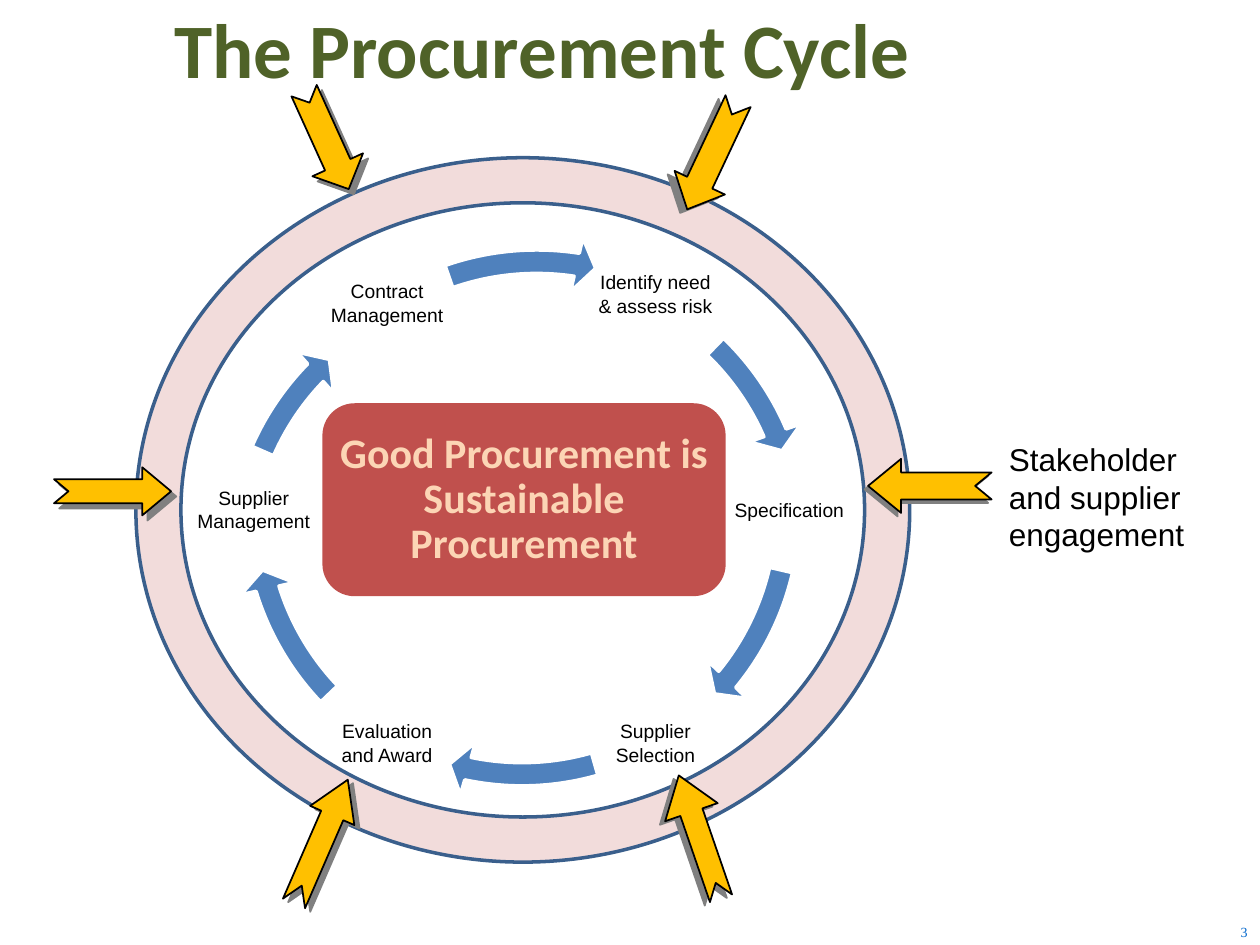
from lxml.etree import SubElement
from pptx import Presentation
from pptx.dml.color import RGBColor
from pptx.enum.shapes import MSO_SHAPE as SHAPE
from pptx.enum.text import MSO_ANCHOR as ANCHOR, MSO_AUTO_SIZE as AUTOSIZE, PP_ALIGN as ALIGN
from pptx.oxml.ns import qn
from pptx.util import Cm, Pt

GREEN, BLUE, RED, PEACH = "4F6228", "4F81BD", "C0504D", "FCD5B5"
GOLD, PINK, NAVY, GREY = "FFC000", "F2DCDB", "3A5F8C", "808080"
BLACK, WHITE, NUMBER_BLUE = "000000", "FFFFFF", "0066CC"

LABEL_SIZE = 2.41
STAGES = [  # text, left, top
    ("Identify need & assess risk", 12.01, 4.72),
    ("Specification", 14.71, 9.07),
    ("Supplier Selection", 12.01, 13.77),
    ("Evaluation and Award", 6.6, 13.77),
    ("Supplier Management", 3.91, 9.07),
    ("Contract Management", 6.6, 4.9),
]
CYCLE_ARROWS = [  # left, top, size, start and end in degrees
    (4.78, 4.93, 11.84, 313.95, 336.67),
    (4.6, 4.37, 11.84, 12.95, 39.44),
    (4.67, 4.45, 11.71, 73.98, 101.85),
    (4.6, 4.37, 11.84, 136.39, 162.88),
    (4.29, 5.33, 11.84, 203.69, 224.13),
    (4.9, 4.72, 11.84, 250.74, 278.65),
]
ENGAGEMENT_ARROWS = [  # place, rotation, shaft and head, shadow distance and direction
    ((1.09, 9.42, 2.36, 0.97), 0, (0.5, 0.6), 4.2, 45),
    ((5.49, 2.26, 2.18, 1.12), 65.6, (0.5, 0.48), 4.2, 45),
    ((13.16, 2.57, 2.41, 1.12), 115.2, (0.5, 0.53), 4.5, 153),
    ((17.5, 9.25, 2.49, 1.09), 180, (0.5, 0.61), 2.8, 135),
    ((12.8, 16.31, 2.62, 1.12), 251, (0.42, 0.7), 3.6, 146),
    ((5.11, 16.48, 2.72, 0.97), 293.5, (0.5, 0.81), 3.6, 34),
]


def color(value):
    return RGBColor.from_string(value)


class SlideBuilder:
    def __init__(self, page, font="Arial"):
        self.page = page
        self.font = font

    def fill_text(self, shape, lines, size, ink=BLACK, font=None, bold=False,
                  align=ALIGN.LEFT, anchor=ANCHOR.MIDDLE, inset=None, spacing=None):
        frame = shape.text_frame
        frame.word_wrap = True
        frame.auto_size = AUTOSIZE.NONE
        frame.vertical_anchor = anchor
        if inset is not None:
            frame.margin_left = frame.margin_right = Cm(inset)
            frame.margin_top = frame.margin_bottom = Cm(inset)
        for index, line in enumerate(lines):
            para = frame.add_paragraph() if index else frame.paragraphs[0]
            para.alignment = align
            if spacing:
                para.line_spacing = spacing
            span = para.add_run()
            span.text = line
            span.font.name = font or self.font
            span.font.size = Pt(size)
            span.font.bold = bold
            span.font.color.rgb = color(ink)

    def title(self, text, place, **style):
        title = self.page.shapes.title
        title.left, title.top, title.width, title.height = map(Cm, place)
        self.fill_text(title, [text], align=ALIGN.CENTER, **style)

    def text(self, lines, place, **style):
        box = self.page.shapes.add_textbox(*map(Cm, place))
        self.fill_text(box, lines, **style)

    def shape(self, kind, place, fill, line=None, weight=1, adjust=()):
        shape = self.page.shapes.add_shape(kind, *map(Cm, place))
        shape.shadow.inherit = False
        shape.fill.solid()
        shape.fill.fore_color.rgb = color(fill)
        if line:
            shape.line.color.rgb = color(line)
            shape.line.width = Pt(weight)
        else:
            shape.line.fill.background()
        for index, value in enumerate(adjust):
            shape.adjustments[index] = value
        return shape

    def cycle_arrow(self, left, top, size, start, end):
        # Angle adjustments count 60000 units per degree, scaled down by 100000.
        adjust = (0.04, 2.5, end * 0.6, start * 0.6, 0.047)
        self.shape(SHAPE.CIRCULAR_ARROW, (left, top, size, size), BLUE, WHITE, 2, adjust)

    def engagement_arrow(self, place, rotation, adjust, distance, direction):
        arrow = self.shape(SHAPE.NOTCHED_RIGHT_ARROW, place, GOLD, BLACK, 1, adjust)
        arrow.rotation = rotation
        effects = arrow._element.spPr.find(qn("a:effectLst"))
        shadow = SubElement(effects, qn("a:outerShdw"), dist=str(Pt(distance)),
                            dir=str(direction * 60000), algn="ctr", rotWithShape="0")
        SubElement(shadow, qn("a:srgbClr"), val=GREY)


def main():
    deck = Presentation()
    deck.slide_width, deck.slide_height = Cm(25.4), Cm(19.05)
    builder = SlideBuilder(deck.slides.add_slide(deck.slide_layouts[5]))

    builder.title("The Procurement Cycle", (-0.5, 0, 22.86, 1.93),
                  size=44, ink=GREEN, font="Calibri", bold=True)
    builder.text(["3"], (20.5, 18.52, 4.9, 0.53), size=8, ink=NUMBER_BLUE,
                 font="Times New Roman", align=ALIGN.RIGHT)

    builder.shape(SHAPE.DONUT, (2.74, 3.18, 15.6, 14.2), PINK, NAVY, 2, (0.064,))
    for stage, left, top in STAGES:
        builder.text([stage], (left, top, LABEL_SIZE, LABEL_SIZE), size=11,
                     align=ALIGN.CENTER, inset=0.04)
    for arrow in CYCLE_ARROWS:
        builder.cycle_arrow(*arrow)

    core = builder.shape(SHAPE.ROUNDED_RECTANGLE, (6.5, 8.13, 8.13, 3.89), RED)
    builder.fill_text(core, ["Good Procurement is Sustainable Procurement"], size=24,
                      ink=PEACH, font="Calibri", bold=True, align=ALIGN.CENTER,
                      inset=0.15, spacing=0.9)

    for arrow in ENGAGEMENT_ARROWS:
        builder.engagement_arrow(*arrow)
    builder.text(["Stakeholder", "and supplier engagement"], (20.09, 8.74, 5.74, 2.57),
                 size=18, anchor=ANCHOR.TOP)

    deck.save("out.pptx")


if __name__ == "__main__":
    main()
